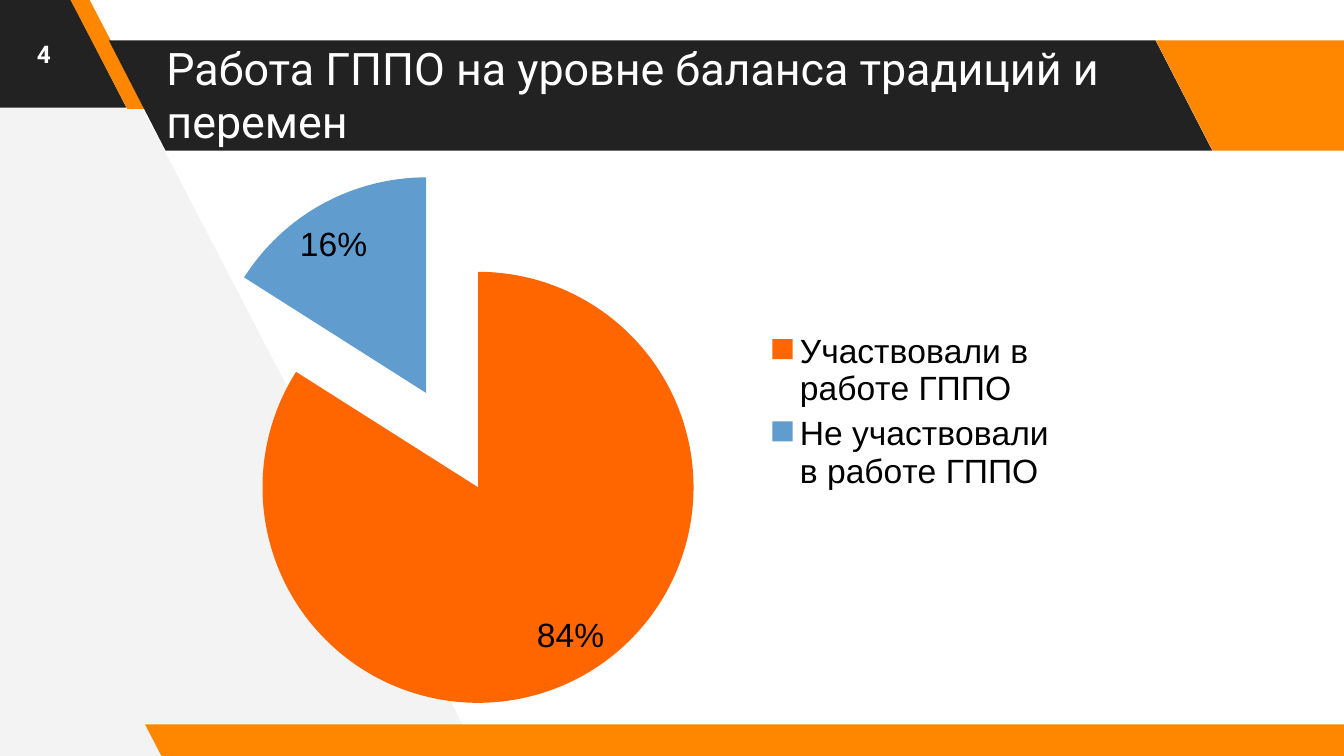
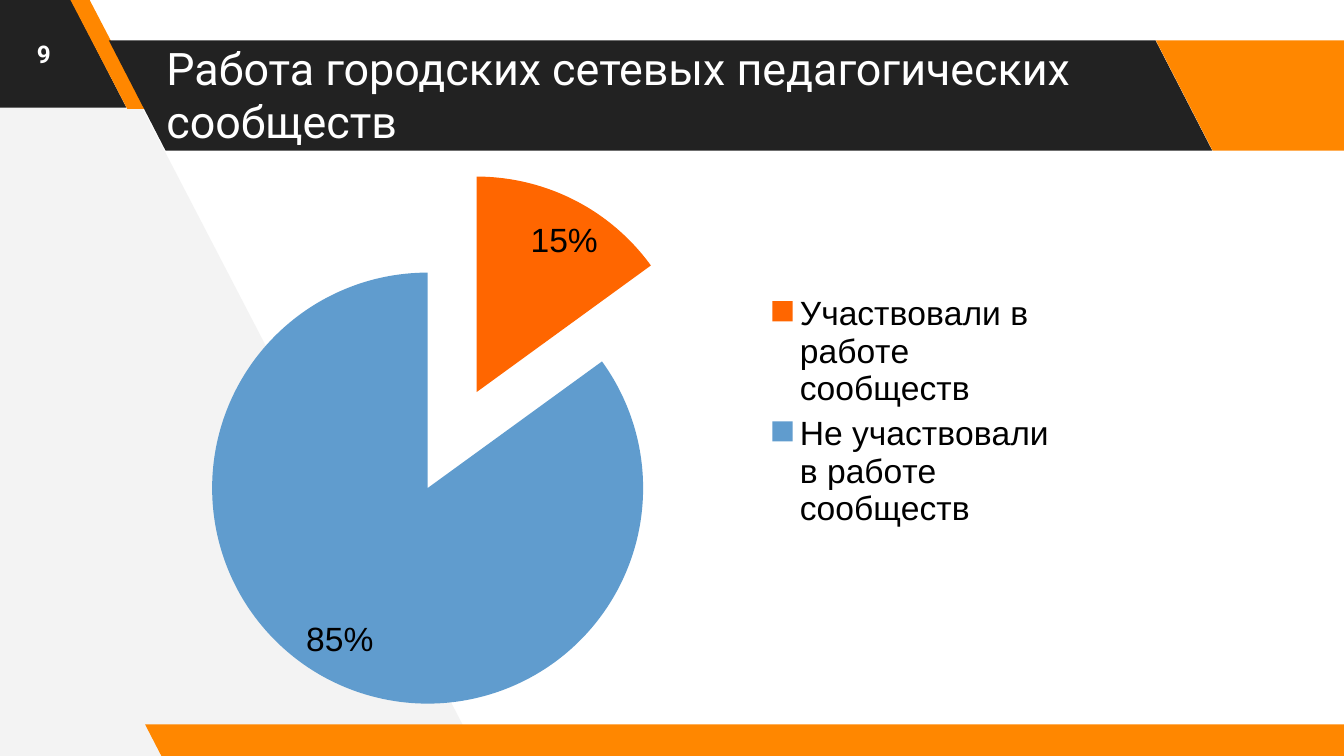
from lxml.etree import SubElement
from pptx import Presentation
from pptx.chart.data import CategoryChartData
from pptx.dml.color import RGBColor
from pptx.enum.chart import XL_CHART_TYPE, XL_LABEL_POSITION, XL_LEGEND_POSITION
from pptx.enum.shapes import MSO_SHAPE
from pptx.enum.text import MSO_ANCHOR, PP_ALIGN
from pptx.oxml.ns import qn
from pptx.util import Inches, Pt

WHITE = RGBColor(0xFF, 0xFF, 0xFF)
BLACK = RGBColor(0x00, 0x00, 0x00)
PALE = RGBColor(0xF3, 0xF3, 0xF3)
DARK = RGBColor(0x22, 0x22, 0x22)
ORANGE = RGBColor(0xFF, 0x87, 0x00)
PIE_COLOURS = (RGBColor(0xFF, 0x66, 0x00), RGBColor(0x60, 0x9C, 0xCE))

# Slanted bands from back to front: left, top, width, height, slant, colour
BANDS = [
    (-0.98, -0.02, 1.92, 0.82, 0.515, DARK),
    (0.52, -0.01, 0.57, 0.82, 0.75, ORANGE),
    (0.81, 0.3, 8.21, 0.82, 0.515, DARK),
    (8.6, 0.3, 1.92, 0.82, 0.515, ORANGE),
    (1.08, 5.39, 9.15, 0.25, 0.515, ORANGE),
]
SIDE_PANEL = [(3.56, 5.62), (0.62, -0.04), (-0.06, -0.04), (-0.02, 5.66)]
PLOT_AREA = {"x": 0, "y": 0.097, "w": 0.619, "h": 0.903}
EXPLOSION = 25

# Page number, title, name of the group, share that took part
PAGES = [
    ("4", "Работа ГППО на уровне баланса традиций и перемен", "ГППО", 0.84),
    ("9", "Работа городских сетевых педагогических сообществ", "сообществ", 0.15),
]


def write(box, text, size, colour=WHITE, font="Roboto", bold=False,
          align=PP_ALIGN.LEFT):
    frame = box.text_frame
    frame.word_wrap = True
    frame.vertical_anchor = MSO_ANCHOR.MIDDLE
    frame.margin_left = frame.margin_right = Inches(0.1)
    frame.margin_top = frame.margin_bottom = Inches(0.1)
    para = frame.paragraphs[0]
    para.alignment = align
    span = para.add_run()
    span.text = text
    span.font.name = font
    span.font.size = Pt(size)
    span.font.bold = bold
    span.font.color.rgb = colour


class Deck:
    def __init__(self):
        self.file = Presentation()
        self.file.slide_width = Inches(10)
        self.file.slide_height = Inches(10) * 9 // 16
        self.page = None

    def add_page(self, number, title):
        self.page = self.file.slides.add_slide(self.file.slide_layouts[6])
        self.panel(SIDE_PANEL, PALE)
        for band in BANDS:
            self.band(*band)
        self.text(1.14, 0.29, 7.95, 0.82, title, size=24)
        self.text(0, 0, 0.65, 0.8, number, size=13, bold=True,
                  align=PP_ALIGN.CENTER)

    def paint(self, shape, colour):
        shape.shadow.inherit = False
        shape.fill.solid()
        shape.fill.fore_color.rgb = colour
        shape.line.fill.background()

    def panel(self, points, colour):
        corners = [(Inches(x), Inches(y)) for x, y in points]
        builder = self.page.shapes.build_freeform(*corners[0])
        builder.add_line_segments(corners[1:], close=True)
        self.paint(builder.convert_to_shape(), colour)

    def band(self, left, top, width, height, slant, colour):
        shape = self.page.shapes.add_shape(
            MSO_SHAPE.PARALLELOGRAM, Inches(left), Inches(top),
            Inches(width), Inches(height))
        shape.adjustments[0] = slant
        shape._element.spPr.find(qn("a:xfrm")).set("flipH", "1")
        self.paint(shape, colour)

    def text(self, left, top, width, height, text, **style):
        box = self.page.shapes.add_textbox(
            Inches(left), Inches(top), Inches(width), Inches(height))
        write(box, text, **style)

    def pie(self, left, top, width, height, categories, values):
        data = CategoryChartData(number_format="0%")
        data.categories = categories
        data.add_series("Series 1", values)
        chart = self.page.shapes.add_chart(
            XL_CHART_TYPE.PIE, Inches(left), Inches(top),
            Inches(width), Inches(height), data).chart
        chart.has_title = False
        chart.font.name = "Arial"
        chart.font.size = Pt(18)
        chart.font.color.rgb = BLACK
        chart.has_legend = True
        chart.legend.position = XL_LEGEND_POSITION.RIGHT
        chart.legend.include_in_layout = False

        # Slices and their labels
        plot = chart.plots[0]
        plot.vary_by_categories = True
        plot.has_data_labels = True
        labels = plot.data_labels
        labels.show_value = True
        labels.show_percentage = False
        labels.number_format = "0%"
        labels.number_format_is_linked = False
        labels.position = XL_LABEL_POSITION.BEST_FIT
        series = plot.series[0]
        for index, colour in enumerate(PIE_COLOURS):
            fill = series.points[index].format.fill
            fill.solid()
            fill.fore_color.rgb = colour
        element = series._element
        explosion = SubElement(element, qn("c:explosion"), val=str(EXPLOSION))
        element.find(qn("c:dPt")).addprevious(explosion)
        self.place_plot(chart)

    def place_plot(self, chart):
        area = chart._chartSpace.chart.plotArea
        for layout in area.findall(qn("c:layout")):
            area.remove(layout)
        layout = SubElement(area, qn("c:layout"))
        area.insert(0, layout)
        manual = SubElement(layout, qn("c:manualLayout"))
        SubElement(manual, qn("c:layoutTarget"), val="inner")
        for side in ("x", "y"):
            SubElement(manual, qn(f"c:{side}Mode"), val="edge")
        for side, share in PLOT_AREA.items():
            SubElement(manual, qn(f"c:{side}"), val=str(share))


def main():
    deck = Deck()
    for number, title, group, share in PAGES:
        deck.add_page(number, title)
        categories = [f"{start} в работе {group}"
                      for start in ("Участвовали", "Не участвовали")]
        deck.pie(1.3, 0.84, 6.67, 4.44, categories,
                 (share, round(1 - share, 2)))
    deck.file.save("out.pptx")


if __name__ == "__main__":
    main()
